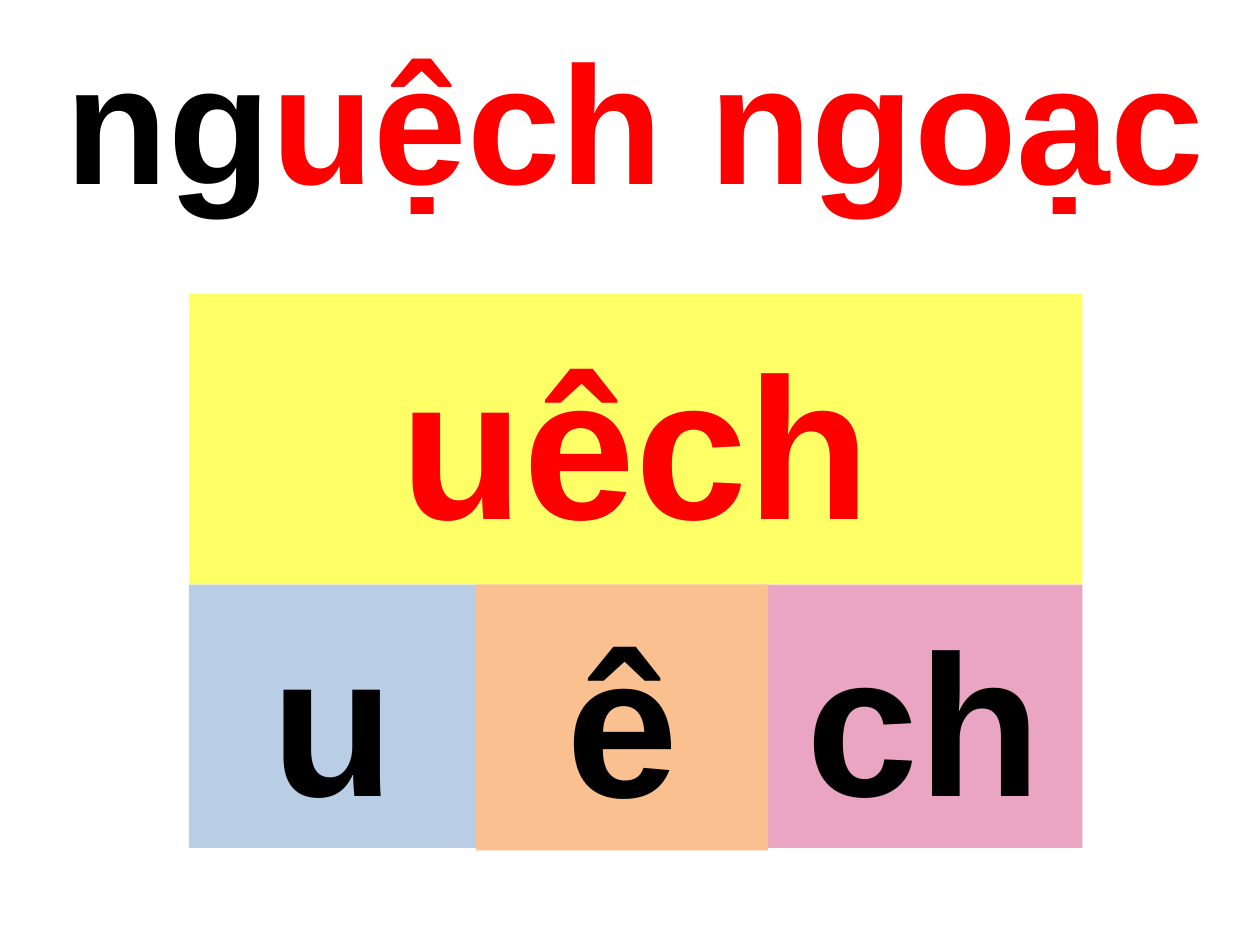
from pptx import Presentation, util as u
from pptx.dml.color import RGBColor
from pptx.enum import shapes, text

BLACK, RED, WHITE = "000000", "FF0000", "FFFFFF"


def colour(value):
    return RGBColor.from_string(value)


class SpellingPage:
    font_name = "Arial"
    title_size = 96
    tile_size = 115

    def __init__(self, deck):
        self.page = deck.slides.add_slide(deck.slide_layouts[5])

    def fill(self, box, value):
        box.fill.solid()
        box.fill.fore_color.rgb = colour(value)

    def style(self, para, size):
        para.alignment = text.PP_ALIGN.CENTER
        para.font.name = self.font_name
        para.font.size = u.Pt(size)
        para.font.bold = True

    def title(self, spans, left, top, width, height):
        box = self.page.shapes.title
        box.left, box.top = u.Pt(left), u.Pt(top)
        box.width, box.height = u.Pt(width), u.Pt(height)
        self.fill(box, WHITE)
        frame = box.text_frame
        frame.word_wrap = True
        frame.auto_size = text.MSO_AUTO_SIZE.SHAPE_TO_FIT_TEXT
        frame.vertical_anchor = text.MSO_ANCHOR.TOP
        para = frame.paragraphs[0]
        self.style(para, self.title_size)
        for words, ink in spans:
            span = para.add_run()
            span.text = words
            span.font.color.rgb = colour(ink)

    def tile(self, words, ink, back, left, top, width, height):
        box = self.page.shapes.add_shape(
            shapes.MSO_SHAPE.RECTANGLE,
            u.Pt(left), u.Pt(top), u.Pt(width), u.Pt(height))
        box.shadow.inherit = False
        box.line.fill.background()
        self.fill(box, back)
        frame = box.text_frame
        frame.word_wrap = True
        frame.vertical_anchor = text.MSO_ANCHOR.MIDDLE
        para = frame.paragraphs[0]
        para.text = words
        self.style(para, self.tile_size)
        para.font.color.rgb = colour(ink)


def main():
    deck = Presentation()
    deck.slide_width, deck.slide_height = u.Pt(720), u.Pt(540)
    page = SpellingPage(deck)
    page.title([("ng", BLACK), ("uệch ngoạc", RED)], 18, 6, 690, 124)

    left, top, width, rhyme_height = 108, 168, 510.5, 166
    page.tile("uêch", RED, "FFFF66", left, top, width, rhyme_height)
    sounds = [
        ("u", "B9CDE5", left, 164, 150.5),
        ("ch", "E9A5C2", 437, 181.5, 150.5),
        ("ê", "FAC090", left + 164, 167, 152),
    ]
    for words, back, sound_left, sound_width, sound_height in sounds:
        page.tile(words, BLACK, back, sound_left, top + rhyme_height,
                  sound_width, sound_height)
    deck.save("out.pptx")


if __name__ == "__main__":
    main()
